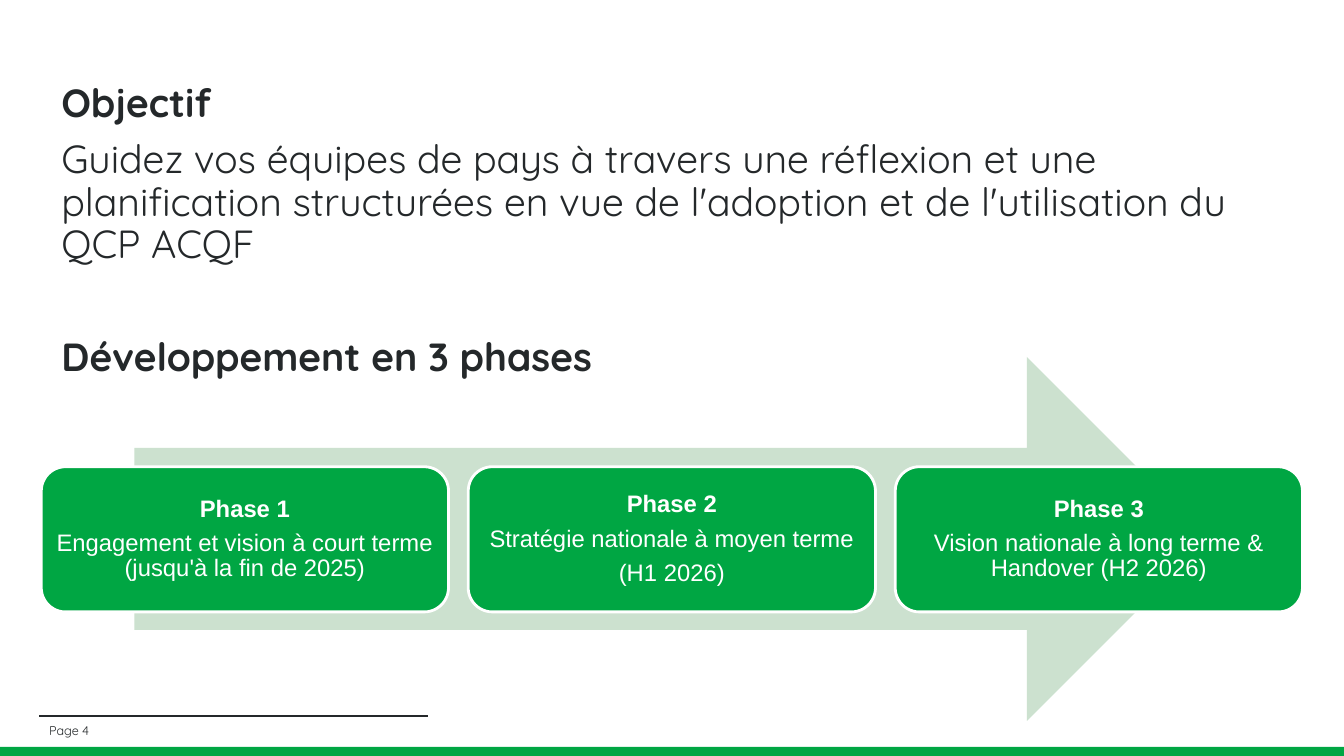
from dataclasses import dataclass

from lxml.etree import SubElement
from pptx import Presentation
from pptx.dml.color import RGBColor
from pptx.enum.shapes import MSO_CONNECTOR, MSO_SHAPE
from pptx.enum.text import MSO_ANCHOR, MSO_AUTO_SIZE, PP_ALIGN
from pptx.oxml.ns import qn
from pptx.util import Pt

# Content: body lines are (text, bold, space before in points)
BODY = [
    ("Objectif", True, 0),
    ("Guidez vos équipes de pays à travers une réflexion et une planification "
     "structurées en vue de l'adoption et de l'utilisation du QCP ACQF", False, 10),
    ("Développement en 3 phases", True, 50.4),
]
PHASES = [
    ("Phase 1", "Engagement et vision à court terme (jusqu'à la fin de 2025)"),
    ("Phase 2", "Stratégie nationale à moyen terme", "(H1 2026)"),
    ("Phase 3", "Vision nationale à long terme & Handover (H2 2026)"),
]
PAGE = "Page 4"


@dataclass(frozen=True)
class Theme:
    green: RGBColor = RGBColor(0x00, 0xA6, 0x43)
    pale: RGBColor = RGBColor(0xCC, 0xE1, 0xCF)
    ink: RGBColor = RGBColor(0x24, 0x28, 0x2A)
    white: RGBColor = RGBColor(0xFF, 0xFF, 0xFF)
    main_font: str = "Quicksand"
    phase_font: str = "Arial"
    body_size: float = 28
    phase_size: float = 17
    page_size: float = 9


T = Theme()
SLIDE_W, SLIDE_H = 960, 540
LEFT = 28
CARD_X, CARD_Y, CARD_W, CARD_H, CARD_STEP = 29.5, 333.4, 290.9, 103.7, 305


def add_run(p, text, font, size, color, bold=False):
    r = p.add_run()
    r.text = text
    r.font.name = font
    r.font.size = Pt(size)
    r.font.bold = bold
    r.font.color.rgb = color


def add_block(slide, kind, box, fill, line=None):
    sp = slide.shapes.add_shape(kind, *map(Pt, box))
    sp.shadow.inherit = False
    sp.fill.solid()
    sp.fill.fore_color.rgb = fill
    if line is None:
        sp.line.fill.background()
    else:
        sp.line.color.rgb = line
        sp.line.width = Pt(2)
    return sp


def add_footer(slide):
    add_block(slide, MSO_SHAPE.RECTANGLE, (-2, 533.5, 964, 9), T.green)
    rule = slide.shapes.add_connector(
        MSO_CONNECTOR.STRAIGHT, Pt(LEFT), Pt(511.7), Pt(305.5), Pt(511.7))
    rule.line.color.rgb = T.ink
    rule.line.width = Pt(1.5)
    SubElement(rule._element.spPr, qn("a:effectLst"))
    tf = slide.shapes.add_textbox(Pt(LEFT), Pt(515), Pt(292), Pt(13.7)).text_frame
    tf.word_wrap = True
    tf.vertical_anchor = MSO_ANCHOR.MIDDLE
    add_run(tf.paragraphs[0], PAGE, T.main_font, T.page_size, T.ink)


def fill_body(slide):
    slide.shapes.title._element.getparent().remove(slide.shapes.title._element)
    body = slide.placeholders[1]
    body.left, body.top, body.width, body.height = map(Pt, (LEFT, 56, 904, 423))
    tf = body.text_frame
    tf.word_wrap = True
    tf.auto_size = MSO_AUTO_SIZE.NONE
    tf.vertical_anchor = MSO_ANCHOR.TOP
    for i, (text, bold, before) in enumerate(BODY):
        p = tf.add_paragraph() if i else tf.paragraphs[0]
        pPr = p._p.get_or_add_pPr()
        pPr.set("marL", str(Pt(8.6)))
        pPr.set("indent", "0")
        SubElement(pPr, qn("a:buNone"))
        p.line_spacing = 0.9
        p.space_before = Pt(before)
        add_run(p, text, T.main_font, T.body_size, T.ink, bold)


def add_phases(slide):
    add_block(slide, MSO_SHAPE.RIGHT_ARROW, (96, 255, 767.5, 260), T.pale)
    for i, lines in enumerate(PHASES):
        box = (CARD_X + i * CARD_STEP, CARD_Y, CARD_W, CARD_H)
        card = add_block(slide, MSO_SHAPE.ROUNDED_RECTANGLE, box, T.green, T.white)
        tf = card.text_frame
        tf.word_wrap = True
        tf.vertical_anchor = MSO_ANCHOR.MIDDLE
        tf.margin_left = tf.margin_right = tf.margin_top = tf.margin_bottom = Pt(4.5)
        for j, text in enumerate(lines):
            p = tf.add_paragraph() if j else tf.paragraphs[0]
            p.alignment = PP_ALIGN.CENTER
            p.line_spacing = 0.9
            p.space_after = Pt(6)
            add_run(p, text, T.phase_font, T.phase_size, T.white, j == 0)


def main():
    prs = Presentation()
    prs.slide_width, prs.slide_height = Pt(SLIDE_W), Pt(SLIDE_H)
    slide = prs.slides.add_slide(prs.slide_layouts[1])
    fill_body(slide)
    add_footer(slide)
    add_phases(slide)
    prs.save("out.pptx")


if __name__ == "__main__":
    main()
